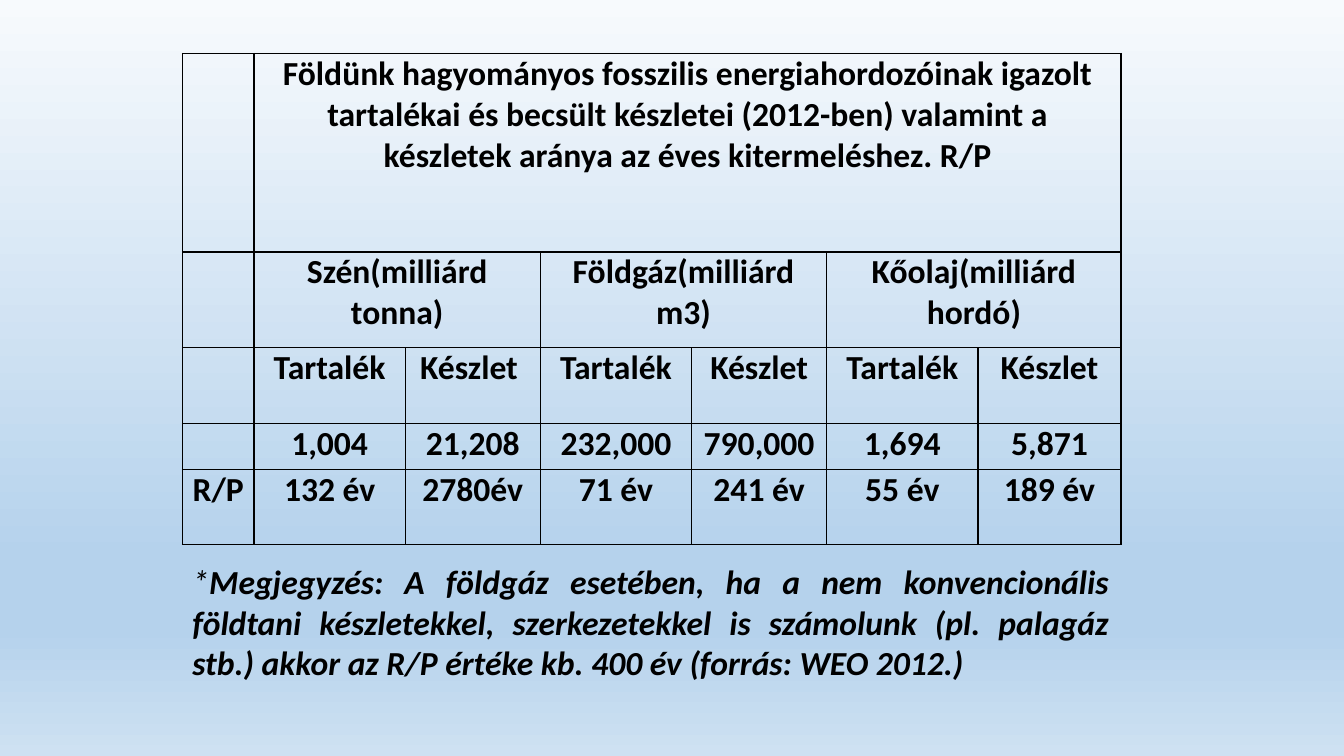
from lxml import etree
from pptx import Presentation
from pptx.dml.color import RGBColor
from pptx.enum.text import MSO_AUTO_SIZE, PP_ALIGN
from pptx.oxml import parse_xml
from pptx.oxml.ns import nsdecls, qn
from pptx.util import Inches, Pt

BLACK = RGBColor(0x00, 0x00, 0x00)
PALE = RGBColor(0xF7, 0xFA, 0xFD)
SKY = RGBColor(0xB5, 0xD2, 0xEC)
LIGHT = RGBColor(0xCE, 0xE1, 0xF2)
CENTER = PP_ALIGN.CENTER
JUSTIFY = PP_ALIGN.JUSTIFY
GROW = MSO_AUTO_SIZE.SHAPE_TO_FIT_TEXT


def write(paragraph, text, align=CENTER, bold=True, italic=False):
    paragraph.alignment = align
    run = paragraph.add_run()
    run.text = text
    run.font.name = "Calibri"
    run.font.size = Pt(24)
    run.font.bold = bold
    run.font.italic = italic
    run.font.color.rgb = BLACK


def outline(cell):
    properties = cell._tc.get_or_add_tcPr()
    for position, side in enumerate(("lnL", "lnR", "lnT", "lnB")):
        properties.insert(position, parse_xml(
            f'<a:{side} {nsdecls("a")} w="12700"><a:solidFill>'
            f'<a:srgbClr val="{BLACK}"/></a:solidFill></a:{side}>'))


prs = Presentation()
prs.slide_width = Inches(13.33)
prs.slide_height = Inches(7.5)
slide = prs.slides.add_slide(prs.slide_layouts[6])

backdrop = slide.background.fill
backdrop.gradient()
backdrop.gradient_angle = 270
stops = next(slide.element.iter(qn("a:gsLst")))
for stop in list(stops):
    stops.remove(stop)
for percent, color in ((0, PALE), (74, SKY), (83, SKY), (100, LIGHT)):
    stop = etree.SubElement(stops, qn("a:gs"), pos=str(percent * 1000))
    etree.SubElement(stop, qn("a:srgbClr"), val=str(color))

HEADING = ("Földünk hagyományos fosszilis energiahordozóinak igazolt tartalékai és "
           "becsült készletei (2012-ben) valamint a készletek aránya az éves "
           "kitermeléshez. R/P")
reserves = [
    ["", HEADING, "", "", "", "", ""],
    ["", "Szén(milliárd tonna)", "", "Földgáz(milliárd m3)", "", "Kőolaj(milliárd hordó)", ""],
    ["", "Tartalék", "Készlet ", "Tartalék", "Készlet", "Tartalék", "Készlet"],
    ["", "1,004", "21,208", "232,000", "790,000", "1,694", "5,871"],
    ["R/P", "132 év", "2780év", "71 év", "241 év", "55 év", "189 év"],
]
column_widths = [0.71, 1.5, 1.34, 1.5, 1.34, 1.5, 1.42]
row_heights = [1.97, 0.95, 0.75, 0.46, 0.74]

table = slide.shapes.add_table(5, 7, Inches(1.81), Inches(0.53), Inches(9.29), Inches(4.88)).table
table.first_row = False
table.horz_banding = False
for column, width in zip(table.columns, column_widths):
    column.width = Inches(width)
for row, height in zip(table.rows, row_heights):
    row.height = Inches(height)

table.cell(0, 1).merge(table.cell(0, 6))
for first in (1, 3, 5):
    table.cell(1, first).merge(table.cell(1, first + 1))

for row, texts in zip(table.rows, reserves):
    for cell, text in zip(row.cells, texts):
        cell.margin_left = cell.margin_right = Inches(0.07)
        cell.margin_top = cell.margin_bottom = 0
        cell.fill.background()
        outline(cell)
        if text:
            write(cell.text_frame.paragraphs[0], text)
table.cell(0, 1).text_frame.paragraphs[0].space_after = Pt(6)

note = slide.shapes.add_textbox(Inches(1.81), Inches(5.52), Inches(9.29), Inches(1.31)).text_frame
note.word_wrap = True
note.auto_size = GROW
remark = note.paragraphs[0]
write(remark, "*", align=JUSTIFY, bold=False, italic=True)
write(remark, "Megjegyzés: A földgáz esetében, ha a nem konvencionális földtani készletekkel, "
      "szerkezetekkel is számolunk (pl. palagáz stb.) akkor az R/P értéke kb. 400 év "
      "(forrás: WEO 2012.)", align=JUSTIFY, italic=True)

prs.save("out.pptx")
